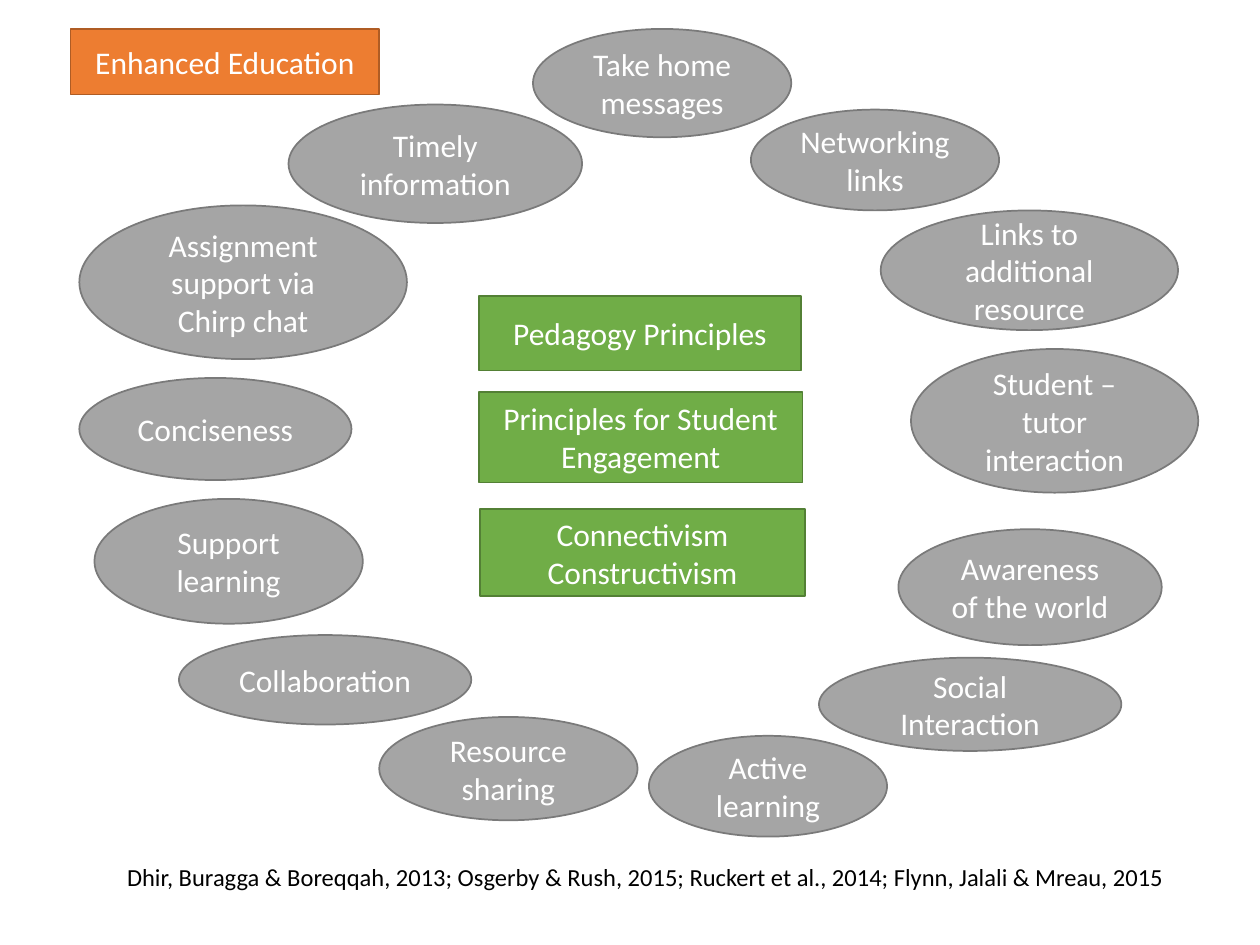
from pptx import Presentation
from pptx.dml.color import RGBColor as Rgb
from pptx.enum.shapes import MSO_SHAPE as Kind
from pptx.enum.text import MSO_ANCHOR as Anchor, MSO_AUTO_SIZE as Fit, PP_ALIGN as Align
from pptx.util import Inches, Pt

HUES = {
    "gray": "A5A5A5", "gray edge": "7A7A7A",
    "green": "70AD47", "green edge": "538035",
    "orange": "ED7D31", "orange edge": "AF5C24",
    "white": "FFFFFF", "black": "000000",
}
TITLE = ("Enhanced Education", (0.56, 0.23, 2.45, 0.52))
RING = [
    ("Take home messages", (4.23, 0.23, 2.05, 0.86)),
    ("Networking links", (5.96, 0.87, 1.97, 0.8)),
    ("Links to additional resource", (6.99, 1.67, 2.36, 0.95)),
    ("Student – tutor interaction", (7.23, 2.77, 2.28, 1.14)),
    ("Awareness of the world", (7.13, 4.2, 2.09, 0.92)),
    ("Social Interaction", (6.5, 5.22, 2.4, 0.74)),
    ("Active learning", (5.15, 5.84, 1.89, 0.8)),
    ("Resource sharing", (3.01, 5.69, 2.05, 0.82)),
    ("Collaboration", (1.42, 5.04, 2.32, 0.71)),
    ("Support learning", (0.75, 3.96, 2.13, 0.99)),
    ("Conciseness", (0.63, 3, 2.16, 0.81)),
    ("Assignment support via Chirp chat", (0.63, 1.63, 2.6, 1.22)),
    ("Timely information", (2.29, 0.83, 2.33, 0.94)),
]
CORE = [
    ("Pedagogy Principles", (3.8, 2.35, 2.56, 0.59)),
    ("Principles for Student Engagement", (3.8, 3.11, 2.57, 0.72)),
    ("Connectivism\nConstructivism", (3.81, 4.04, 2.58, 0.69)),
]
CITE = (
    "Dhir, Buragga & Boreqqah, 2013; Osgerby & Rush, 2015; "
    "Ruckert et al., 2014; Flynn, Jalali & Mreau, 2015",
    (0.91, 6.79, 8.68, 0.34),
)
FRAME = {
    "word_wrap": True, "auto_size": Fit.NONE, "vertical_anchor": Anchor.MIDDLE,
    "margin_left": Inches(0.1), "margin_right": Inches(0.1),
    "margin_top": Inches(0.05), "margin_bottom": Inches(0.05),
}


def hue(name):
    return Rgb.from_string(HUES[name])


def place(box):
    return [Inches(n) for n in box]


def write(shape, text, size, tone, align):
    frame = shape.text_frame
    frame.text = text
    for key, val in FRAME.items():
        setattr(frame, key, val)
    for para in frame.paragraphs:
        para.alignment = align
        for key, val in {"name": "Calibri", "size": Pt(size)}.items():
            setattr(para.font, key, val)
        para.font.color.rgb = hue(tone)


def paint(shape, text, tone):
    shape.fill.solid()
    shape.fill.fore_color.rgb = hue(tone)
    shape.line.color.rgb = hue(tone + " edge")
    shape.line.width = Pt(1)
    write(shape, text, 18, "white", Align.CENTER)


def main():
    """Build the slide of learning benefits around the teaching principles."""
    deck = Presentation()
    deck.slide_width, deck.slide_height = Inches(10), Inches(7.5)
    slide = deck.slides.add_slide(deck.slide_layouts[5])
    shapes = slide.shapes

    text, box = TITLE
    title = shapes.title
    for key, val in zip(("left", "top", "width", "height"), place(box)):
        setattr(title, key, val)
    paint(title, text, "orange")

    for items, kind, tone in ((RING, Kind.OVAL, "gray"), (CORE, Kind.RECTANGLE, "green")):
        for text, box in items:
            shape = shapes.add_shape(kind, *place(box))
            shape.shadow.inherit = False
            paint(shape, text, tone)

    text, box = CITE
    write(shapes.add_textbox(*place(box)), text, 14, "black", Align.LEFT)
    deck.save("out.pptx")


if __name__ == "__main__":
    main()
